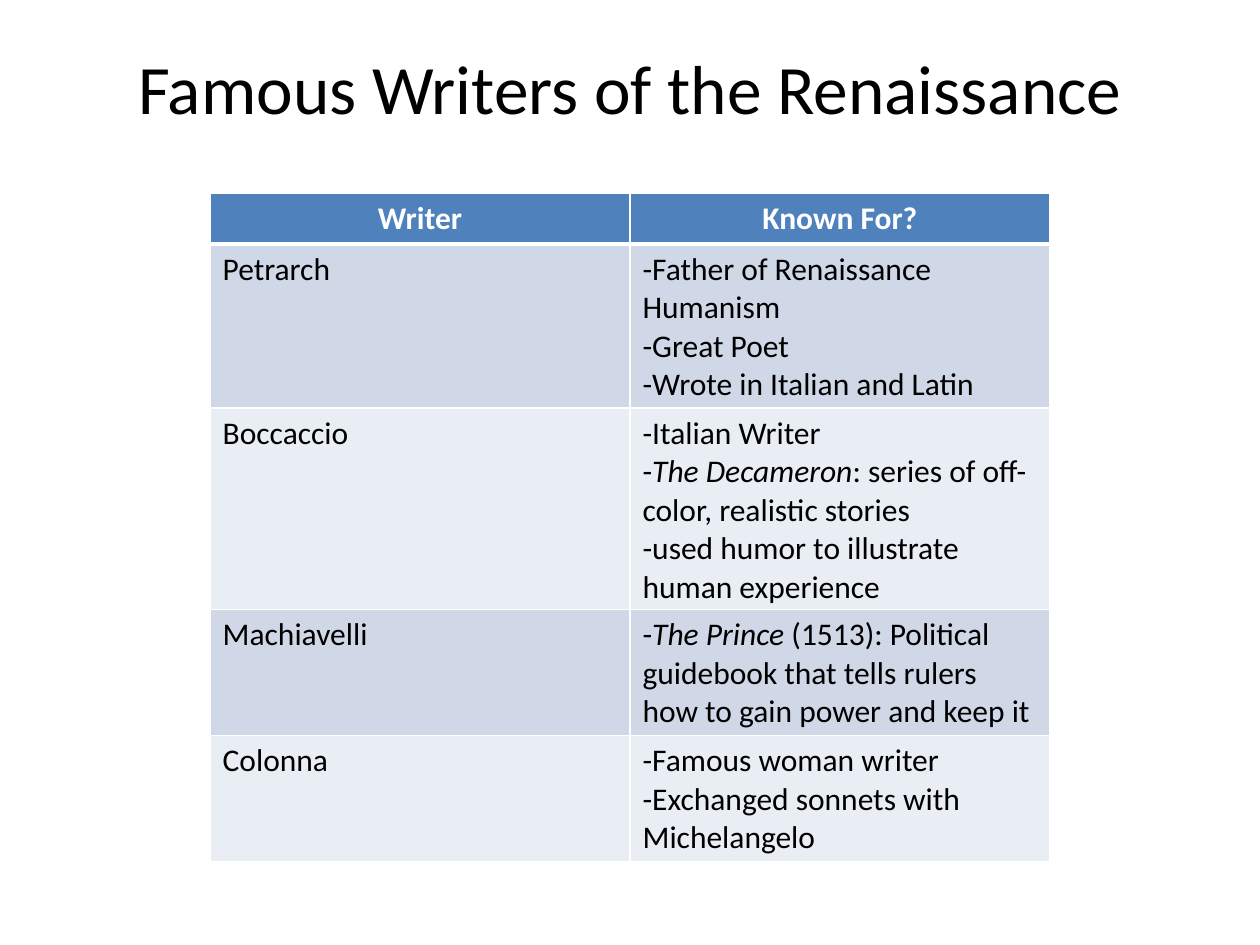
from lxml import etree
from pptx import Presentation
from pptx import util as u
from pptx.dml import color
from pptx.enum import text
from pptx.oxml import ns

FONT = "Calibri"
HEAD = ["Writer", "Known For?"]
WRITERS = [
    ("Petrarch", ["-Father of Renaissance Humanism", "-Great Poet",
                  "-Wrote in Italian and Latin"]),
    ("Boccaccio", ["-Italian Writer",
                   "-*The Decameron*: series of off-color, realistic stories",
                   "-used humor to illustrate human experience"]),
    ("Machiavelli", ["-*The Prince* (1513): Political guidebook that tells "
                     "rulers how to gain power and keep it"]),
    ("Colonna", ["-Famous woman writer",
                 "-Exchanged sonnets with Michelangelo"]),
]


def paint(fill, tint):
    fill.solid()
    fill.fore_color.rgb = color.RGBColor.from_string(tint)


def style(run, size, tint, bold=False):
    run.font.name = FONT
    run.font.size = u.Pt(size)
    run.font.bold = bold
    paint(run.font.fill, tint)


def edge(cell, widths):
    props = cell._tc.get_or_add_tcPr()
    for side, width in zip("LRTB", widths):
        line = etree.SubElement(props, ns.qn(f"a:ln{side}"), w=str(u.Pt(width)))
        solid = etree.SubElement(line, ns.qn("a:solidFill"))
        etree.SubElement(solid, ns.qn("a:srgbClr"), val="FFFFFF")


def write(cell, lines, tint, head=False):
    frame = cell.text_frame
    for i, line in enumerate(lines):
        para = frame.add_paragraph() if i else frame.paragraphs[0]
        para.alignment = text.PP_ALIGN.CENTER if head else text.PP_ALIGN.LEFT
        for j, part in enumerate(line.split("*")):
            run = para.add_run()
            run.text = part
            style(run, 18, tint, head)
            run.font.italic = j % 2 == 1


def add_title(slide, x, y, w, h):
    frame = slide.shapes.add_textbox(x, y, w, h).text_frame
    frame.word_wrap = True
    frame.vertical_anchor = text.MSO_ANCHOR.MIDDLE
    frame.text = "Famous Writers of the Renaissance"
    para = frame.paragraphs[0]
    para.alignment = text.PP_ALIGN.CENTER
    style(para.runs[0], 39.6, "000000")


def add_grid(slide, x, y, w, row):
    count = len(WRITERS) + 1
    table = slide.shapes.add_table(count, 2, x, y, w, row * count).table
    rows = [[[name] for name in HEAD]]
    rows += [[[name], facts] for name, facts in WRITERS]
    for r, cells in enumerate(rows):
        head = r == 0
        band = "4F81BD" if head else ("E9EDF4", "D0D8E8")[r % 2]
        for c, lines in enumerate(cells):
            cell = table.cell(r, c)
            write(cell, lines, "FFFFFF" if head else "000000", head)
            edge(cell, (1, 1, 3 if r == 1 else 1, 3 if head else 1))
            paint(cell.fill, band)


def main():
    deck = Presentation()
    deck.slide_width, deck.slide_height = u.Cm(25.4), u.Cm(19.05)
    slide = deck.slides.add_slide(deck.slide_layouts[6])
    paint(slide.background.fill, "FFFFFF")
    add_title(slide, u.Cm(1.27), u.Cm(0.76), u.Cm(22.86), u.Cm(1.98))
    wide = u.Cm(16.93)
    add_grid(slide, (deck.slide_width - wide) // 2, u.Cm(3.89), wide, u.Cm(1.03))
    deck.save("out.pptx")


if __name__ == "__main__":
    main()
